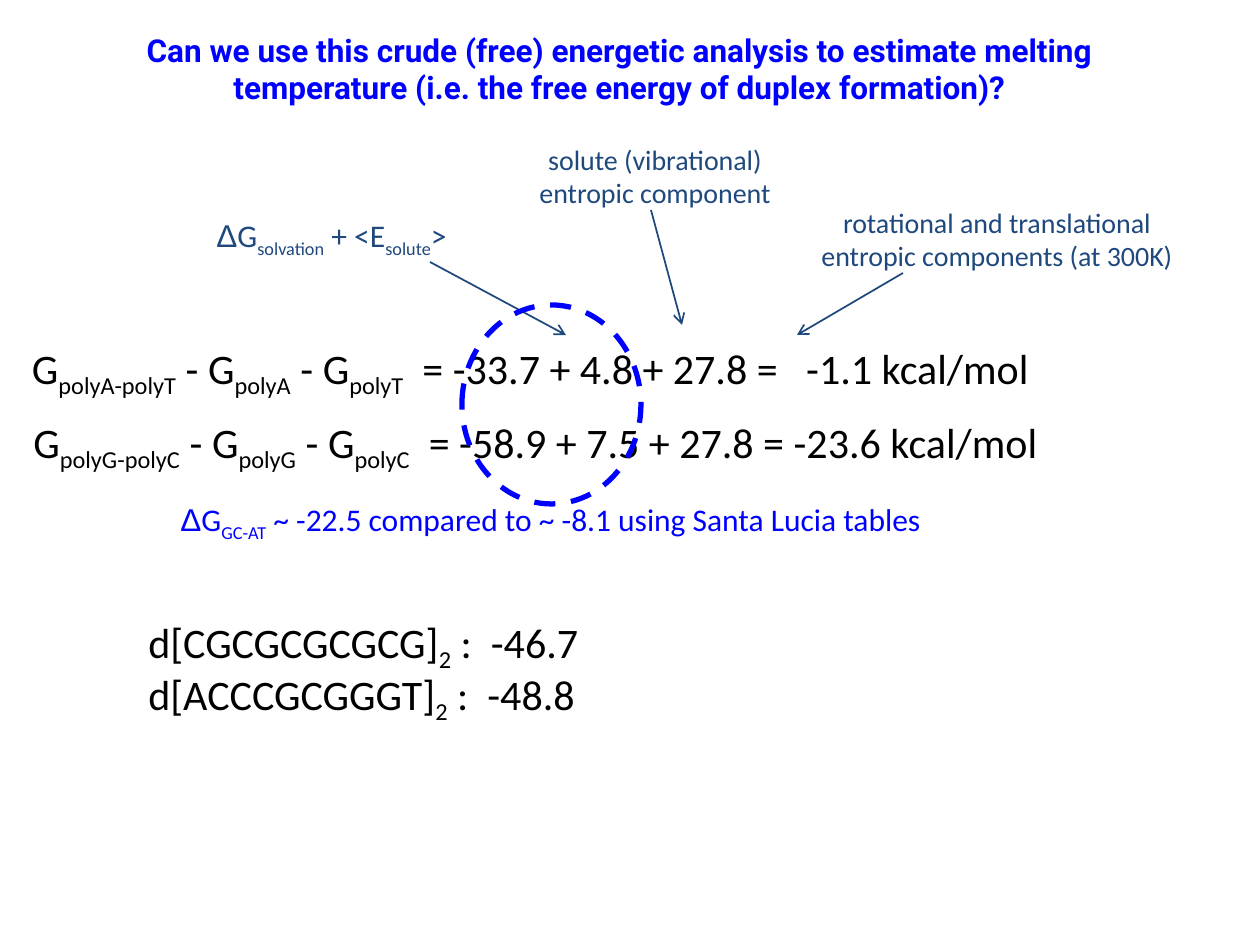
from lxml.etree import SubElement
from pptx import Presentation
from pptx.dml.color import RGBColor
from pptx.enum.dml import MSO_LINE
from pptx.enum.shapes import MSO_CONNECTOR, MSO_SHAPE
from pptx.enum.text import MSO_ANCHOR, MSO_AUTO_SIZE, PP_ALIGN
from pptx.oxml.ns import qn
from pptx.util import Emu, Pt

BLACK = RGBColor(0x00, 0x00, 0x00)
BLUE = RGBColor(0x00, 0x00, 0xFF)
NAVY = RGBColor(0x1F, 0x49, 0x7D)
EMU_PER_PX = 914400 / 126


def px(*values):
    return [Emu(round(v * EMU_PER_PX)) for v in values]


def add_run(p, text, font, size, color, subscript=False):
    r = p.add_run()
    r.text = text
    r.font.name = font
    r.font.size = Pt(size)
    r.font.color.rgb = color
    if subscript:
        r.font._element.set("baseline", "-25000")


def add_formula(s, box, text, size, color, align=PP_ALIGN.LEFT, wrap=False):
    tf = s.shapes.add_textbox(*px(*box)).text_frame
    tf.word_wrap = wrap
    tf.auto_size = MSO_AUTO_SIZE.SHAPE_TO_FIT_TEXT
    p = tf.paragraphs[0]
    p.alignment = align
    for i, part in enumerate(text.split("|")):
        if part.startswith("Δ"):
            add_run(p, "Δ", "Arial", size, color)
            part = part[1:]
        if part:
            add_run(p, part, "Calibri", size, color, i % 2 == 1)
    return tf


def add_title(s, box):
    sp = s.shapes.title
    sp.left, sp.top, sp.width, sp.height = px(*box)
    tf = sp.text_frame
    tf.text = ("Can we use this crude (free) energetic analysis to estimate melting "
               "temperature (i.e. the free energy of duplex formation)?")
    tf.auto_size = MSO_AUTO_SIZE.NONE
    tf.vertical_anchor = MSO_ANCHOR.MIDDLE
    p = tf.paragraphs[0]
    p.alignment = PP_ALIGN.CENTER
    font = p.runs[0].font
    font.name = "Roboto"
    font.size = Pt(18)
    font.bold = True
    font.color.rgb = BLUE


def add_arrow(s, tip, tail):
    line = s.shapes.add_connector(MSO_CONNECTOR.STRAIGHT, *px(*tip, *tail))
    line.line.color.rgb = NAVY
    line.line.width = Pt(1)
    SubElement(line.line._get_or_add_ln(), qn("a:headEnd"), type="arrow")
    SubElement(line._element.spPr, qn("a:effectLst"))


def add_annotations(s, left, top):
    labels = [
        ((630, 63, 420, 81), "rotational and translational entropic components (at 300K)", 16),
        ((0, 74, 349, 54), "ΔG|solvation| + <E|solute|>", 18),
        ((357, 0, 282, 81), "solute (vibrational) entropic component", 16),
    ]
    for (x, y, w, h), text, size in labels:
        add_formula(s, (left + x, top + y, w, h), text, size, NAVY, PP_ALIGN.CENTER, True)
    arrows = [((640, 199), (746, 137)), ((409, 199), (273, 126)), ((525, 189), (494, 74))]
    for tip, tail in arrows:
        add_arrow(s, *[(left + x, top + y) for x, y in (tip, tail)])


def add_equations(s, left, top):
    tf = add_formula(s, (left, top, 1176, 63),
                     "G|polyA-polyT| - G|polyA| - G|polyT|  = -33.7 + 4.8 + 27.8 =   -1.1 kcal/mol",
                     24, BLACK, wrap=True)
    tf.margin_left = px(32)[0]
    add_formula(s, (left + 21, top + 74, 1140, 63),
                "G|polyG-polyC| - G|polyG| - G|polyC|  = -58.9 + 7.5 + 27.8 = -23.6 kcal/mol",
                24, BLACK)
    add_formula(s, (left + 168, top + 158, 915, 54),
                "ΔG|GC-AT| ~ -22.5 compared to ~ -8.1 using Santa Lucia tables", 18, BLUE)


def add_sequences(s, left, top):
    rows = ["d[CGCGCGCGCG]|2| :  -46.7", "d[ACCCGCGGGT]|2| :  -48.8"]
    for i, text in enumerate(rows):
        add_formula(s, (left, top + 52 * i, 478, 63), text, 24, BLACK)


def add_highlight(s, box):
    sp = s.shapes.add_shape(MSO_SHAPE.OVAL, *px(*box))
    sp.shadow.inherit = False
    sp.fill.background()
    sp.line.color.rgb = BLUE
    sp.line.width = Pt(3)
    sp.line.dash_style = MSO_LINE.DASH


def main():
    prs = Presentation()
    prs.slide_width, prs.slide_height = px(1260, 945)
    s = prs.slides.add_slide(prs.slide_layouts[5])
    add_title(s, (84, 21, 1071, 95))
    add_equations(s, 0, 336)
    add_annotations(s, 157, 136)
    add_sequences(s, 136, 610)
    add_highlight(s, (462, 305, 179, 199))
    prs.save("out.pptx")


if __name__ == "__main__":
    main()
